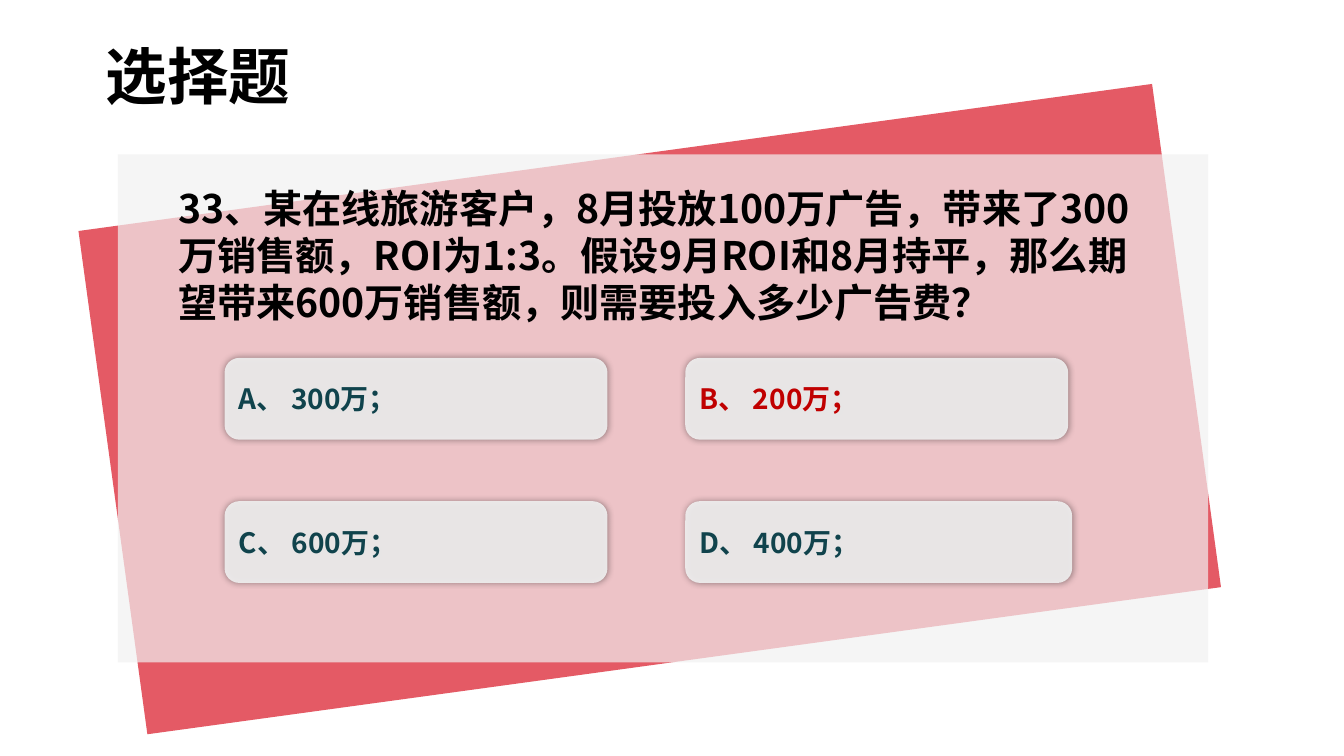
from lxml import etree
from pptx import Presentation
from pptx.dml.color import RGBColor
from pptx.enum.shapes import MSO_SHAPE
from pptx.enum.text import MSO_ANCHOR, PP_ALIGN
from pptx.oxml.ns import qn
from pptx.util import Cm, Pt

RECT, ROUNDED = MSO_SHAPE.RECTANGLE, MSO_SHAPE.ROUNDED_RECTANGLE
TOP, MIDDLE = MSO_ANCHOR.TOP, MSO_ANCHOR.MIDDLE
LEFT, JUSTIFY = PP_ALIGN.LEFT, PP_ALIGN.JUSTIFY

FONT = "Noto Sans CJK SC"
BLACK, TEAL, ANSWER_RED = "000000", "10434C", "C00000"
BAND_RED, PALE_GREY = "D91524", "F1F1F1"

TITLE = "选择题"
QUESTION = ("33、某在线旅游客户，8月投放100万广告，带来了300万销售额，ROI为1:3。"
            "假设9月ROI和8月持平，那么期望带来600万销售额，则需要投入多少广告费？")
# text, colour, width in cm, alignment; read row by row
OPTIONS = [
    ("A、 300万；", TEAL, 9.65, LEFT),
    ("B、 200万；", ANSWER_RED, 9.65, LEFT),
    ("C、 600万；", TEAL, 9.65, LEFT),
    ("D、 400万；", TEAL, 9.75, JUSTIFY),
]

# left, top, width, height in cm
BAND_BOX = (2.72, 3.91, 27.31, 12.8)
PANEL_BOX = (2.97, 3.89, 27.48, 12.8)
TITLE_BOX = (2.41, 0.84, 11.81, 2.13)
QUESTION_BOX = (4.24, 4.52, 25.2, 3.84)
OPTION_LEFT, OPTION_TOP, OPTION_HEIGHT = 5.66, 9.02, 2.06
COLUMN_PITCH, ROW_PITCH, COLUMNS = 11.61, 3.61, 2


def rgb(value):
    return RGBColor.from_string(value)


def add_block(slide, kind, box, color, opacity):
    """Add a borderless shape with a translucent fill and no shadow."""
    block = slide.shapes.add_shape(kind, *map(Cm, box))
    block.shadow.inherit = False
    block.line.fill.background()
    block.fill.solid()
    block.fill.fore_color.rgb = rgb(color)
    fill_color = block._element.spPr.find(qn("a:solidFill"))[0]
    etree.SubElement(fill_color, qn("a:alpha"), val=str(opacity * 1000))
    return block


def add_glow_shadow(block, blur=5, opacity=40):
    """Give the block an even black shadow on all sides."""
    effects = block._element.spPr.find(qn("a:effectLst"))
    shadow = etree.SubElement(effects, qn("a:outerShdw"), blurRad=str(Pt(blur)),
                              dist="0", dir="0", algn="ctr", rotWithShape="0")
    shade = etree.SubElement(shadow, qn("a:srgbClr"), val=BLACK)
    etree.SubElement(shade, qn("a:alpha"), val=str(opacity * 1000))


def write(shape, text, size, color=BLACK, align=LEFT, anchor=TOP):
    frame = shape.text_frame
    frame.word_wrap = True
    frame.vertical_anchor = anchor
    paragraph = frame.paragraphs[0]
    paragraph.alignment = align
    run = paragraph.add_run()
    run.text = text
    run.font.name, run.font.size, run.font.bold = FONT, Pt(size), True
    run.font.color.rgb = rgb(color)
    etree.SubElement(run.font._element, qn("a:ea"), typeface=FONT)


def main():
    deck = Presentation()
    deck.slide_width, deck.slide_height = Cm(33.87), Cm(19.05)
    slide = deck.slides.add_slide(deck.slide_layouts[6])

    band = add_block(slide, RECT, BAND_BOX, BAND_RED, 70)
    band.rotation = 352.2
    add_block(slide, RECT, PANEL_BOX, PALE_GREY, 70)

    write(slide.shapes.add_textbox(*map(Cm, TITLE_BOX)), TITLE, 44)
    write(slide.shapes.add_textbox(*map(Cm, QUESTION_BOX)), QUESTION, 28)

    for index, (text, color, width, align) in enumerate(OPTIONS):
        row, column = divmod(index, COLUMNS)
        box = (OPTION_LEFT + column * COLUMN_PITCH,
               OPTION_TOP + row * ROW_PITCH, width, OPTION_HEIGHT)
        option = add_block(slide, ROUNDED, box, PALE_GREY, 90)
        option.adjustments[0] = 0.18
        add_glow_shadow(option)
        write(option, text, 20, color=color, align=align, anchor=MIDDLE)

    deck.save("out.pptx")


if __name__ == "__main__":
    main()
